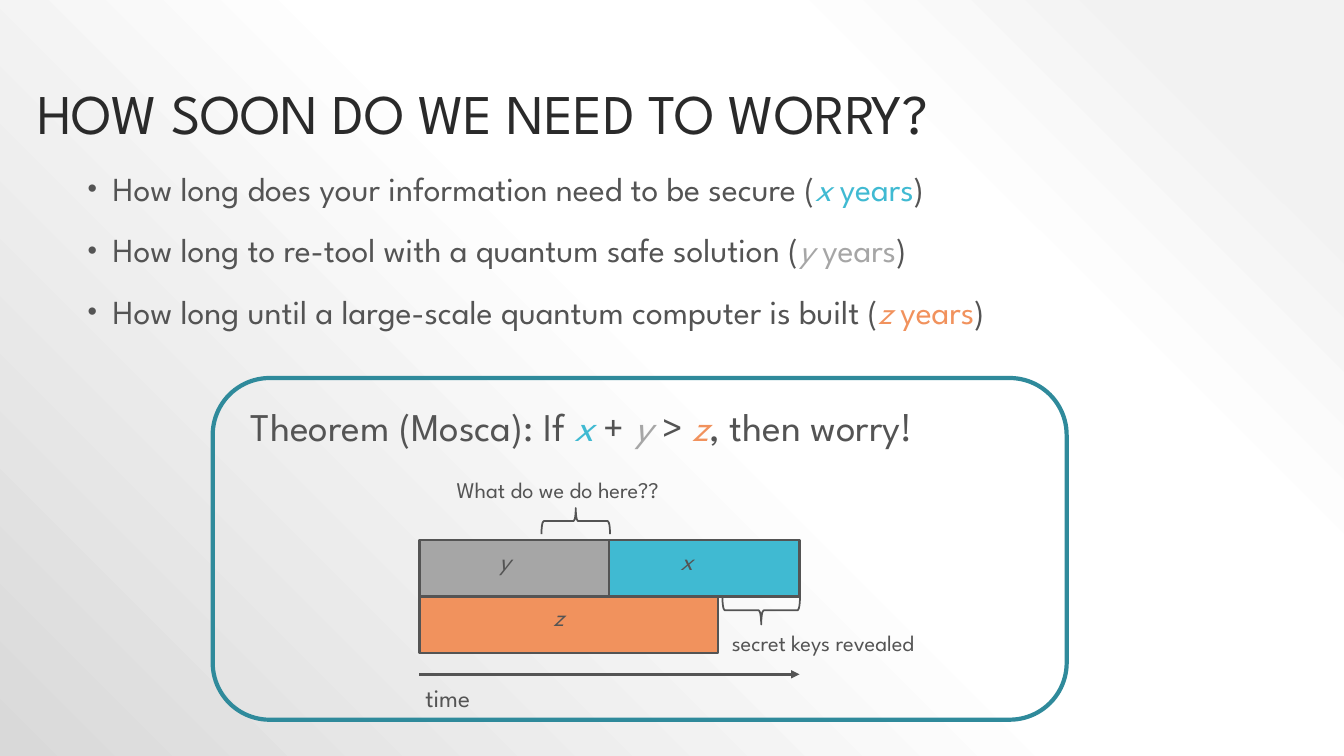
"""Build the slide on when to worry about quantum computers."""
from dataclasses import dataclass
from typing import Optional

from pptx import Presentation
from pptx import util as u
from pptx.dml.color import RGBColor
from pptx.enum import shapes, text
from pptx.oxml import parse_xml
from pptx.oxml.ns import nsdecls, qn

PX = 9144
FONT = "League Spartan"
DARK = RGBColor(0x2A, 0x2A, 0x2A)
INK = RGBColor(0x54, 0x54, 0x54)
BLUE = RGBColor(0x40, 0xBA, 0xD2)
GREY = RGBColor(0xA6, 0xA6, 0xA6)
ORANGE = RGBColor(0xF1, 0x92, 0x5D)
TEAL = RGBColor(0x2F, 0x8A, 0x9B)
STOPS = ((10, "F2F2F2"), (28, "FFFFFF"), (48, "FFFFFF"), (100, "D9D9D9"))
KIND = shapes.MSO_SHAPE
TOP = 536
ROW = 56
LEFT = 416
MID = 604
END = 793


@dataclass(frozen=True)
class Run:
    words: str
    tint: RGBColor = INK
    slant: bool = False


@dataclass(frozen=True)
class Label:
    box: tuple[int, int, int, int]
    size: int
    lines: list[list[Run]]
    list_like: bool = False
    form: Optional[dict] = None


@dataclass(frozen=True)
class Block:
    kind: KIND
    box: tuple[int, int, int, int]
    line: RGBColor = INK
    width: float = 1.75
    fill: Optional[RGBColor] = None
    turn: int = 0


X, Y, Z = Run("x", BLUE, True), Run("y", GREY, True), Run("z", ORANGE, True)


def scale(box: tuple[int, ...]) -> list[u.Emu]:
    """Turn px lengths into EMU."""
    return [u.Emu(n * PX) for n in box]


def paint(slide) -> None:
    """Fill the background with a radial gradient from the top right."""
    slide.background.fill.gradient()
    old = slide.element.find(".//" + qn("a:gradFill"))
    stops = "".join(
        f'<a:gs pos="{at * 1000}"><a:srgbClr val="{tint}"/></a:gs>'
        for at, tint in STOPS)
    new = parse_xml(
        f'<a:gradFill rotWithShape="1" {nsdecls("a")}><a:gsLst>{stops}</a:gsLst>'
        '<a:path path="circle"><a:fillToRect l="100000" b="100000"/></a:path>'
        '</a:gradFill>')
    old.getparent().replace(old, new)


def bullet(para) -> None:
    """Give a paragraph a hanging round bullet."""
    props = para._p.get_or_add_pPr()
    props.set("marL", str(30 * PX))
    props.set("indent", str(-25 * PX))
    for mark in (f'<a:buClr {nsdecls("a")}><a:srgbClr val="{INK}"/></a:buClr>',
                 f'<a:buSzPct {nsdecls("a")} val="80000"/>',
                 f'<a:buFont {nsdecls("a")} typeface="Arial"/>',
                 f'<a:buChar {nsdecls("a")} char="•"/>'):
        props.append(parse_xml(mark))


def write(slide, label: Label) -> None:
    """Draw a text box with its styled runs."""
    frame = slide.shapes.add_textbox(*scale(label.box)).text_frame
    frame.word_wrap = True
    for num, line in enumerate(label.lines):
        para = frame.add_paragraph() if num else frame.paragraphs[0]
        for name, value in (label.form or {}).items():
            setattr(para, name, value)
        if label.list_like:
            bullet(para)
        for part in line:
            run = para.add_run()
            run.text = part.words
            look = {"name": FONT, "size": u.Pt(label.size), "italic": part.slant}
            for name, value in look.items():
                setattr(run.font, name, value)
            run.font.color.rgb = part.tint


def draw(slide, block: Block) -> None:
    """Draw a preset shape."""
    shape = slide.shapes.add_shape(block.kind, *scale(block.box))
    shape.shadow.inherit = False
    shape.rotation = block.turn
    if block.fill is None:
        shape.fill.background()
    else:
        shape.fill.solid()
        shape.fill.fore_color.rgb = block.fill
    shape.line.color.rgb = block.line
    shape.line.width = u.Pt(block.width)


def arrow(slide, start: tuple[int, int], stop: tuple[int, int]) -> None:
    """Draw a line with an arrowhead at its end."""
    link = slide.shapes.add_connector(
        shapes.MSO_CONNECTOR.STRAIGHT, *scale(start + stop))
    link.line.color.rgb = INK
    link.line.width = u.Pt(1.75)
    link.line._get_or_add_ln().append(
        parse_xml(f'<a:tailEnd {nsdecls("a")} type="triangle"/>'))
    link._element.spPr.append(parse_xml(f'<a:effectLst {nsdecls("a")}/>'))


def ask(words: str, part: Run) -> list[Run]:
    """Make a question that ends with a number of years."""
    return [Run(words + " ("), part, Run(" years", part.tint), Run(")")]


BLOCKS = [
    Block(KIND.RECTANGLE, (MID, TOP, END - MID, ROW), fill=BLUE),
    Block(KIND.RECTANGLE, (LEFT, TOP, MID - LEFT, ROW), fill=GREY),
    Block(KIND.RECTANGLE, (LEFT, TOP + ROW, 296, ROW), fill=ORANGE),
    Block(KIND.LEFT_BRACE, (741, 567, 28, 77), width=1.25, turn=270),
    Block(KIND.LEFT_BRACE, (558, 483, 26, 68), width=1.25, turn=90),
    Block(KIND.ROUNDED_RECTANGLE, (211, 375, 847, 339), TEAL, 3),
]
LABELS = [
    Label((27, 67, 1233, 83), 40, [[Run("HOW SOON DO WE NEED TO WORRY?", DARK)]],
          form={"line_spacing": 0.9}),
    Label((72, 166, 1170, 549), 24, [
        ask("How long does your information need to be secure", X),
        ask("How long to re-tool with a quantum safe solution", Y),
        ask("How long until a large-scale quantum computer is built", Z),
    ], True, {"line_spacing": 0.9, "space_before": u.Pt(18)}),
    Label((485, TOP, 52, 40), 18, [[Run("y", INK, True)]]),
    Label((665, TOP, 52, 40), 18, [[Run("x", INK, True)]]),
    Label((539, TOP + ROW, 52, 40), 18, [[Run("z", INK, True)]]),
    Label((412, 672, 154, 40), 18, [[Run("time")]]),
    Label((443, 467, 386, 37), 16, [[Run("What do we do here??")]]),
    Label((239, 394, 786, 57), 28, [[
        Run("Theorem (Mosca): If "), X, Run(" + "), Y, Run(" > "), Z,
        Run(", then worry!")]]),
    Label((716, 619, 357, 37), 16, [[Run("secret keys revealed")]]),
]


def main() -> None:
    """Build and save the deck."""
    deck = Presentation()
    deck.slide_width, deck.slide_height = scale((1333, 750))
    slide = deck.slides.add_slide(deck.slide_layouts[6])
    paint(slide)
    for block in BLOCKS:
        draw(slide, block)
    for label in LABELS:
        write(slide, label)
    slide.shapes[len(BLOCKS)].text_frame.vertical_anchor = text.MSO_ANCHOR.BOTTOM
    arrow(slide, (LEFT, 669), (END, 669))
    deck.save("out.pptx")


if __name__ == "__main__":
    main()
